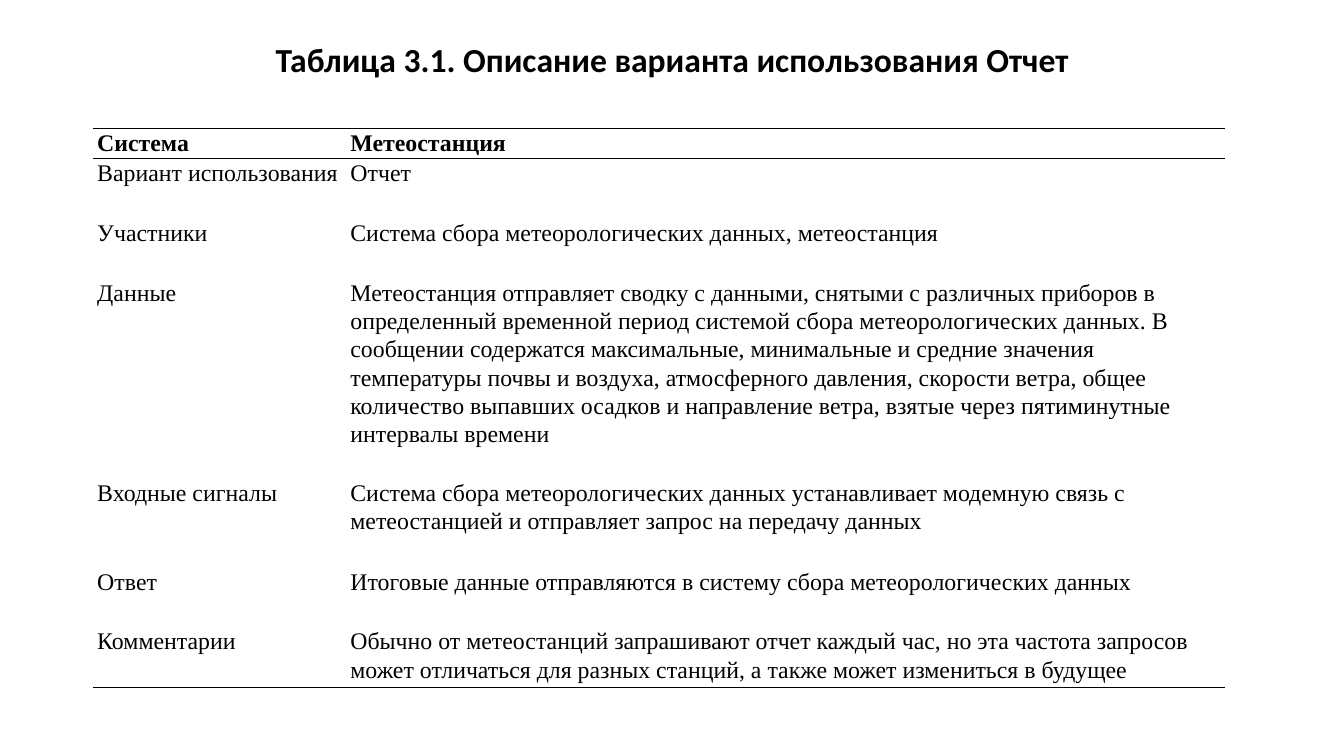
from lxml.etree import SubElement
from pptx import Presentation
from pptx.dml.color import RGBColor as RGB
from pptx.enum.text import MSO_ANCHOR as Anchor, PP_ALIGN as Align
from pptx.oxml.ns import qn
from pptx.util import Cm, Pt

TITLE = "Таблица 3.1. Описание варианта использования Отчет"
ROWS = [
    ("Система", "Метеостанция", 0.74),
    ("Вариант использования", "Отчет", 1.5),
    ("Участники", "Система сбора метеорологических данных, метеостанция", 1.5),
    ("Данные",
     "Метеостанция отправляет сводку с данными, снятыми с различных приборов в "
     "определенный временной период системой сбора метеорологических данных. В "
     "сообщении содержатся максимальные, минимальные и средние значения "
     "температуры почвы и воздуха, атмосферного давления, скорости ветра, общее "
     "количество выпавших осадков и направление ветра, взятые через пятиминутные "
     "интервалы времени", 5.04),
    ("Входные сигналы",
     "Система сбора метеорологических данных устанавливает модемную связь с "
     "метеостанцией и отправляет запрос на передачу данных", 2.25),
    ("Ответ", "Итоговые данные отправляются в систему сбора метеорологических данных", 1.5),
    ("Комментарии",
     "Обычно от метеостанций запрашивают отчет каждый час, но эта частота запросов "
     "может отличаться для разных станций, а также может измениться в будущее", 1.5),
]
COL_WIDTHS = (6.38, 22.15)
LEFT, TITLE_TOP, TABLE_TOP = 2.34, 0.97, 3.23
TITLE_SIZE = (29.21, 1.75)
CELL_INSET = 0.11
THEME = {
    "ink": "000000", "paper": "FFFFFF", "rule": 1,
    "title": {"font": "Calibri", "size": 24},
    "table": {"font": "Times New Roman", "size": 17},
}


def write(tf, text, font, size, bold=False, align=Align.LEFT, spacing=1.0):
    tf.word_wrap = True
    p = tf.paragraphs[0]
    p.alignment, p.line_spacing = align, spacing
    r = p.add_run()
    r.text = text
    r.font.name, r.font.size, r.font.bold = font, Pt(size), bold
    r.font.color.rgb = RGB.from_string(THEME["ink"])


def set_borders(cell, ruled):
    pr = cell._tc.get_or_add_tcPr()
    for i, side in enumerate("LRTB"):
        ln = SubElement(pr, qn(f"a:ln{side}"), w=str(Pt(THEME["rule"])))
        if side in ruled:
            fill = SubElement(ln, qn("a:solidFill"))
            SubElement(fill, qn("a:srgbClr"), val=THEME["ink"])
        else:
            SubElement(ln, qn("a:noFill"))
        pr.insert(i, ln)


def add_title(s):
    tf = s.shapes.add_textbox(Cm(LEFT), Cm(TITLE_TOP), *map(Cm, TITLE_SIZE)).text_frame
    write(tf, TITLE, **THEME["title"], bold=True, align=Align.CENTER, spacing=0.9)


def add_use_case_table(s):
    height = sum(row[-1] for row in ROWS)
    table = s.shapes.add_table(len(ROWS), len(COL_WIDTHS), Cm(LEFT), Cm(TABLE_TOP),
                               Cm(sum(COL_WIDTHS)), Cm(height)).table
    table.first_row = table.horz_banding = False
    for col, width in zip(table.columns, COL_WIDTHS):
        col.width = Cm(width)
    ruled = {0: "TB", 1: "T", len(ROWS) - 1: "B"}
    for i, (*texts, row_height) in enumerate(ROWS):
        table.rows[i].height = Cm(row_height)
        for j, text in enumerate(texts):
            cell = table.cell(i, j)
            cell.margin_left = cell.margin_right = Cm(CELL_INSET)
            cell.margin_top = cell.margin_bottom = 0
            cell.vertical_anchor = Anchor.TOP
            cell.fill.solid()
            cell.fill.fore_color.rgb = RGB.from_string(THEME["paper"])
            write(cell.text_frame, text, **THEME["table"], bold=i == 0, spacing=1.07)
            set_borders(cell, ruled.get(i, ""))


def main():
    prs = Presentation()
    prs.slide_width, prs.slide_height = Cm(33.87), Cm(19.05)
    s = prs.slides.add_slide(prs.slide_layouts[6])
    add_title(s)
    add_use_case_table(s)
    prs.save("out.pptx")


if __name__ == "__main__":
    main()
